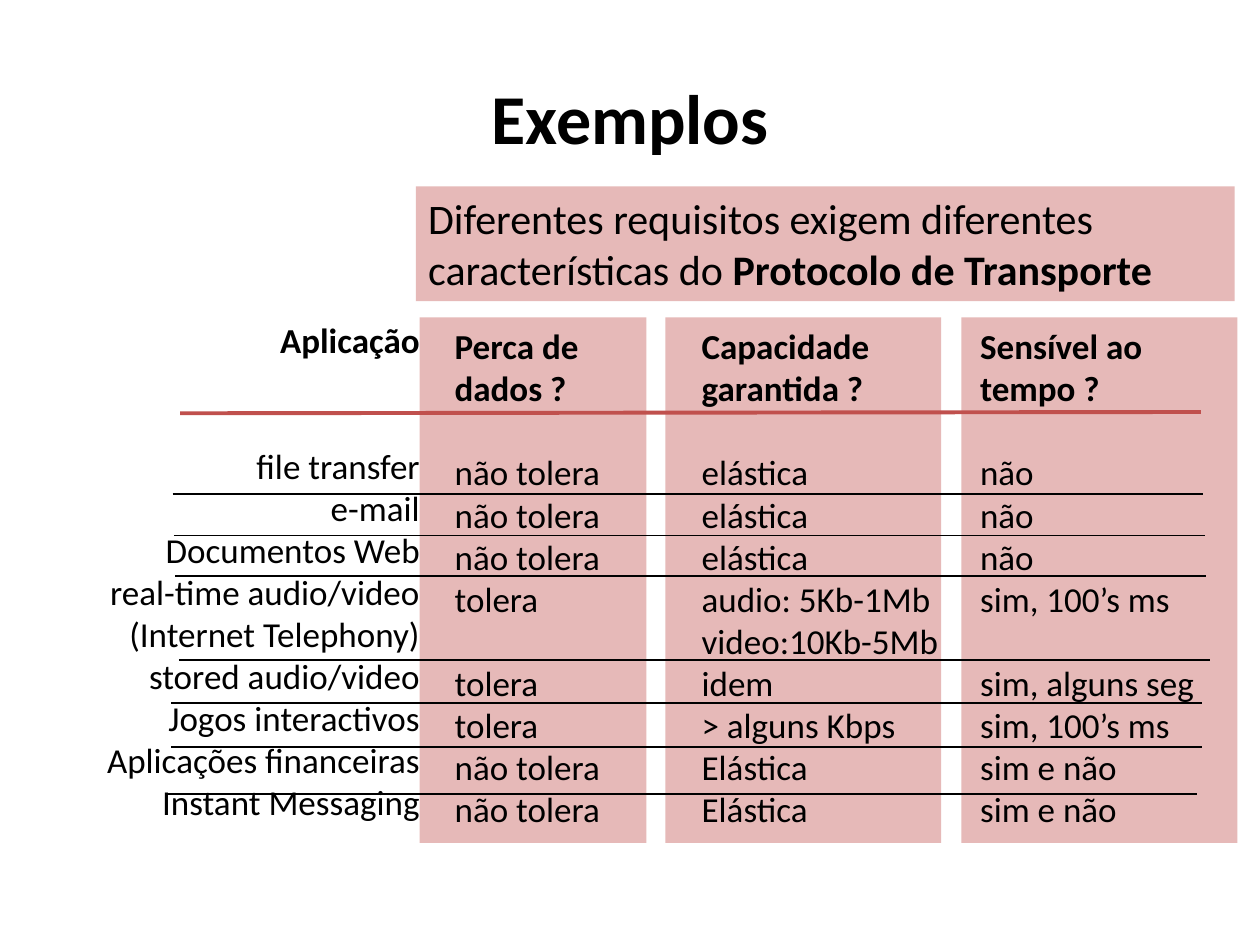
import pptx
import pptx.util
import pptx.dml.color
import pptx.enum.shapes
import pptx.enum.text
import pptx.oxml.ns
import lxml.etree

Inches = pptx.util.Inches
Pt = pptx.util.Pt
Color = pptx.dml.color.RGBColor
Align = pptx.enum.text.PP_ALIGN
Anchor = pptx.enum.text.MSO_ANCHOR

BLACK = Color(0x00, 0x00, 0x00)
PINK = Color(0xE6, 0xB9, 0xB8)
RED = Color(0xC0, 0x50, 0x4D)
FONT = "Calibri"
LINE = 24

PANELS = [(3.33, 1.8), (5.28, 2.19), (7.63, 2.19)]
APPS = ["file transfer", "e-mail", "Documentos Web", "real-time audio/video",
        "(Internet Telephony)", "stored audio/video", "Jogos interactivos",
        "Aplicações financeiras", "Instant Messaging"]
LOSS = ["não tolera"] * 3 + ["tolera", None, "tolera", "tolera"] + ["não tolera"] * 2
RATE = ["elástica"] * 3 + ["audio: 5Kb-1Mb", "video:10Kb-5Mb", "idem",
                           "> alguns Kbps"] + ["Elástica"] * 2
TIME = ["não"] * 3 + ["sim, 100’s ms", None, "sim, alguns seg",
                      "sim, 100’s ms"] + ["sim e não"] * 2
COLUMNS = [
    (0.41, 2.48, 3.02, "Aplicação", 2, APPS, Align.RIGHT),
    (3.51, 2.53, 1.88, "Perca de dados ?", 1, LOSS, Align.LEFT),
    (5.47, 2.53, 2.21, "Capacidade garantida ?", 1, RATE, Align.LEFT),
    (7.68, 2.53, 2.21, "Sensível ao tempo ?", 1, TIME, Align.LEFT),
]
RULES = [(1.37, 3.92), (1.38, 4.25), (1.39, 4.57), (1.42, 5.24),
         (1.36, 5.58), (1.36, 5.93), (1.32, 6.3)]
RULE_WIDTH = 8.18


def style(par, size, bold=False, align=Align.LEFT):
    par.alignment = align
    font = par.font
    font.name, font.size, font.bold = FONT, Pt(size), bold
    font.color.rgb = BLACK


def add_text(slide, left, top, width, height):
    frame = slide.shapes.add_textbox(
        Inches(left), Inches(top), Inches(width), Inches(height)).text_frame
    frame.word_wrap = True
    return frame


def add_title(slide):
    frame = add_text(slide, 0.5, 0.3, 9, 1.25)
    frame.vertical_anchor = Anchor.MIDDLE
    frame.text = "Exemplos"
    style(frame.paragraphs[0], 40, True, Align.CENTER)


def add_panel(slide, left, top, width, height):
    panel = slide.shapes.add_shape(
        pptx.enum.shapes.MSO_SHAPE.RECTANGLE,
        Inches(left), Inches(top), Inches(width), Inches(height))
    panel.shadow.inherit = False
    panel.fill.solid()
    panel.fill.fore_color.rgb = PINK
    panel.line.fill.background()
    return panel


def add_column(slide, left, top, width, head, gap, rows, align):
    frame = add_text(slide, left, top, width, 4.14)
    frame.text = head
    style(frame.paragraphs[0], 20, True, align)
    for row in rows:
        if row is None:
            gap += 1
            continue
        par = frame.add_paragraph()
        par.text = row
        par.space_before = Pt(gap * LINE)
        style(par, 20, align=align)
        gap = 0


def add_rule(slide, start, end, color, weight):
    rule = slide.shapes.add_connector(
        pptx.enum.shapes.MSO_CONNECTOR.STRAIGHT,
        *map(Inches, start + end))
    rule.line.color.rgb = color
    rule.line.width = Pt(weight)
    props = rule._element.spPr
    lxml.etree.SubElement(props, pptx.oxml.ns.qn("a:effectLst"))


def add_banner(slide):
    frame = add_panel(slide, 3.3, 1.48, 6.5, 0.91).text_frame
    frame.word_wrap = True
    frame.vertical_anchor = Anchor.TOP
    par = frame.paragraphs[0]
    style(par, 24)
    par.add_run().text = "Diferentes requisitos exigem diferentes características do "
    key = par.add_run()
    key.text = "Protocolo de Transporte"
    key.font.bold = True


def main():
    deck = pptx.Presentation()
    deck.slide_width, deck.slide_height = Inches(10), Inches(7.5)
    slide = deck.slides.add_slide(deck.slide_layouts[6])
    add_title(slide)
    for left, width in PANELS:
        add_panel(slide, left, 2.52, width, 4.17)
    for column in COLUMNS:
        add_column(slide, *column)
    add_rule(slide, (1.43, 3.28), (9.53, 3.27), RED, 2.25)
    for left, top in RULES:
        add_rule(slide, (left, top), (left + RULE_WIDTH, top), BLACK, 1)
    add_banner(slide)
    deck.save("out.pptx")


if __name__ == "__main__":
    main()
